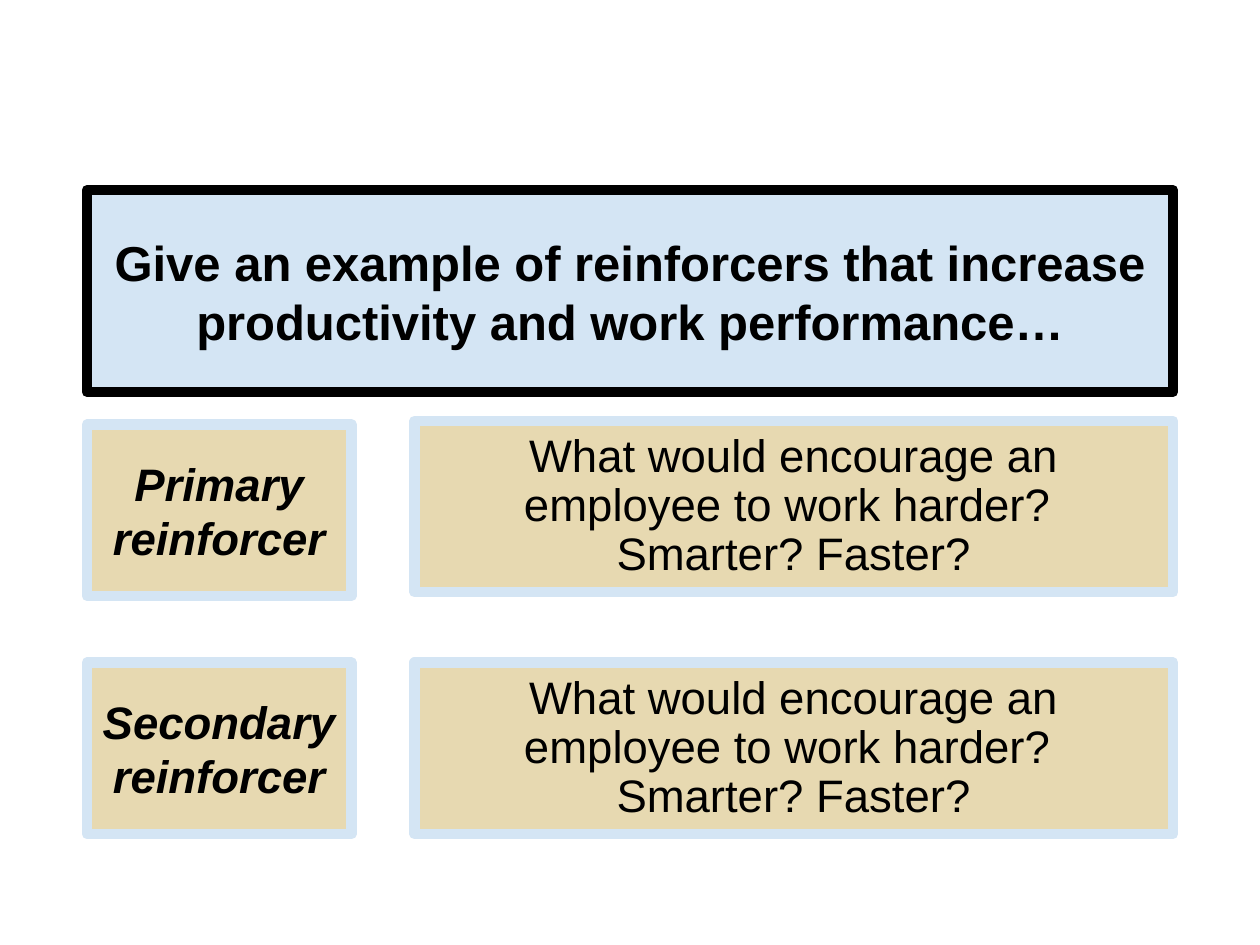
from pptx import Presentation
from pptx.dml.color import RGBColor
from pptx.enum import text
from pptx.oxml import parse_xml
from pptx.oxml.ns import nsdecls
from pptx.util import Pt

# Content
TITLE = "Give an example of reinforcers that increase productivity and work performance…"
QUESTION = "What would encourage an employee to work harder? \nSmarter? Faster?"
# label, label top, question top
ROWS = [
    ("Primary reinforcer", 242.6, 240.5),
    ("Secondary reinforcer", 378.7, 378.7),
]

# Colours and grid
BLACK, BLUE, SAND = "000000", "D4E5F4", "E7D9B1"
LEFT, RIGHT = 49.7, 670.3
LABEL_WIDTH, QUESTION_LEFT = 151.2, 236.9
ROW_HEIGHT = 97.9


def colour(code):
    return RGBColor.from_string(code)


def fill_box(box, words, place, fill, line, size, bold=False, italic=False, spacing=1.0):
    box.left, box.top, box.width, box.height = [Pt(value) for value in place]
    box.fill.solid()
    box.fill.fore_color.rgb = colour(fill)
    box.line.color.rgb = colour(line)
    box.line.width = Pt(6)
    frame = box.text_frame
    frame.text = words
    frame.word_wrap = True
    frame.auto_size = text.MSO_AUTO_SIZE.NONE
    frame.vertical_anchor = text.MSO_ANCHOR.MIDDLE
    for para in frame.paragraphs:
        para.alignment = text.PP_ALIGN.CENTER
        para.line_spacing = spacing
        para.space_before = para.space_after = Pt(0)
        # No bullet or hanging indent
        settings = para._p.get_or_add_pPr()
        settings.set("marL", "0")
        settings.set("indent", "0")
        settings.append(parse_xml(f"<a:buNone {nsdecls('a')}/>"))
        for span in para.runs:
            span.font.name = "Arial"
            span.font.size = Pt(size)
            span.font.bold = bold
            span.font.italic = italic
            span.font.color.rgb = colour(BLACK)


deck = Presentation()
deck.slide_width, deck.slide_height = Pt(720), Pt(540)
page = deck.slides.add_slide(deck.slide_layouts.get_by_name("Comparison"))
boxes = {box.placeholder_format.idx: box for box in page.placeholders}

# Title
fill_box(boxes[0], TITLE, (LEFT, 108.7, RIGHT - LEFT, 115.2),
         BLUE, BLACK, 28, bold=True)

# Label and question on each row
for row, (label, label_top, question_top) in enumerate(ROWS):
    fill_box(boxes[2 * row + 1], label, (LEFT, label_top, LABEL_WIDTH, ROW_HEIGHT),
             SAND, BLUE, 26, bold=True, italic=True)
    fill_box(boxes[2 * row + 2], QUESTION,
             (QUESTION_LEFT, question_top, RIGHT - QUESTION_LEFT, ROW_HEIGHT),
             SAND, BLUE, 26, spacing=0.9)

# Date, footer and number placeholders are not carried over; drop any others
for index, box in boxes.items():
    if index > 4:
        box._element.getparent().remove(box._element)

deck.save("out.pptx")
